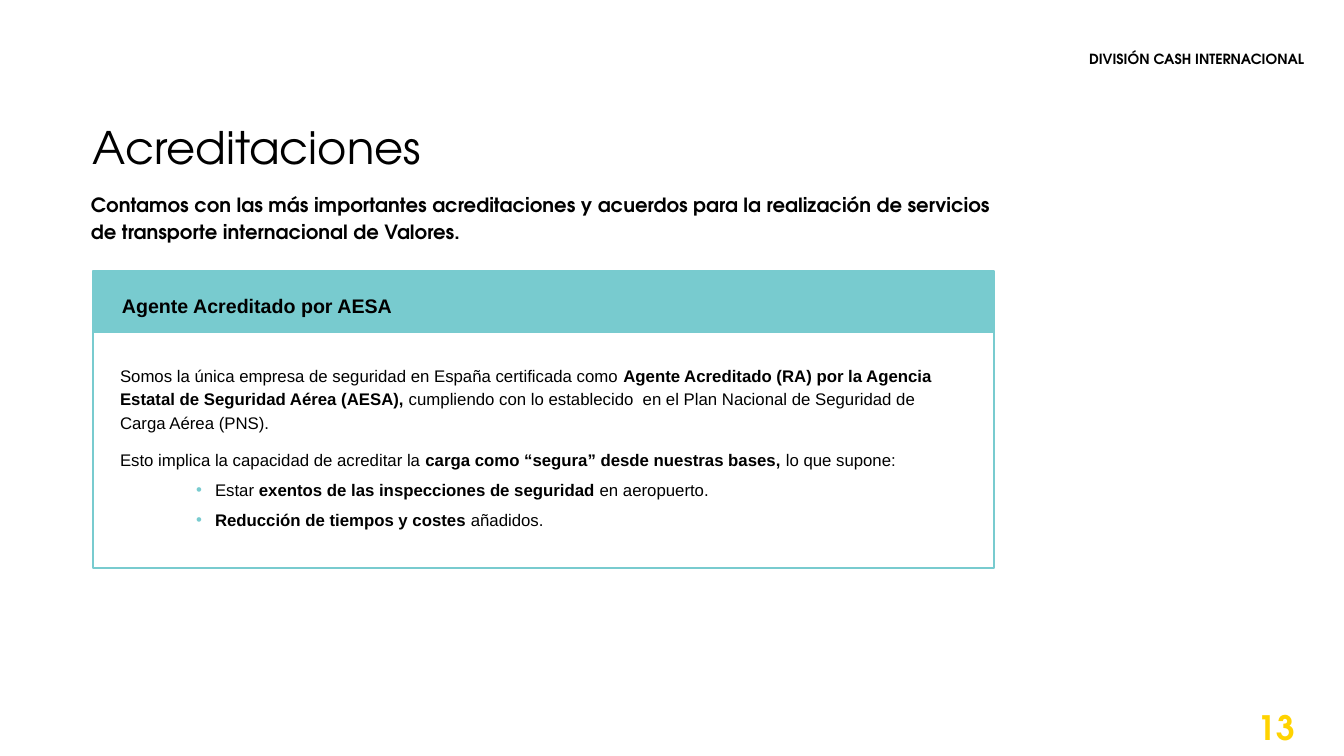
import pptx
import pptx.dml.color
import pptx.enum.shapes
import pptx.enum.text
import pptx.oxml
import pptx.oxml.ns
import pptx.util

PX = 914400 / 100.8
BLACK = pptx.dml.color.RGBColor(0x00, 0x00, 0x00)
TEAL = pptx.dml.color.RGBColor(0x78, 0xCB, 0xCF)
YELLOW = pptx.dml.color.RGBColor(0xFF, 0xD3, 0x00)
DISPLAY_FONT = "TeX Gyre Adventor"
BODY_FONT = "Arial"
ALIGN = pptx.enum.text.PP_ALIGN
ANCHOR = pptx.enum.text.MSO_ANCHOR

CARD_LEFT, CARD_TOP, CARD_WIDTH = 93, 271, 901
BAND_HEIGHT, CARD_HEIGHT = 62, 297

# Each paragraph: alignment, space before, bulleted, spans of (text, bold)
DETAILS = [
    (ALIGN.LEFT, 0, False, [
        ("Somos la única empresa de seguridad en España certificada como ", False),
        ("Agente Acreditado (RA) por la Agencia Estatal de Seguridad Aérea (AESA),", True),
        (" cumpliendo con lo establecido  en el Plan Nacional de Seguridad de "
         "Carga Aérea (PNS).", False)]),
    (ALIGN.JUSTIFY, 10, False, [
        ("Esto implica la capacidad de acreditar la ", False),
        ("carga como “segura” desde nuestras bases, ", True),
        ("lo que supone:", False)]),
    (ALIGN.JUSTIFY, 5, True, [
        ("Estar ", False),
        ("exentos de las inspecciones de seguridad ", True),
        ("en aeropuerto.", False)]),
    (ALIGN.JUSTIFY, 5, True, [
        ("Reducción de tiempos y costes ", True),
        ("añadidos.", False)]),
]


def px(length):
    return pptx.util.Emu(round(length * PX))


def place(shape, left, top, width, height):
    shape.left, shape.top = px(left), px(top)
    shape.width, shape.height = px(width), px(height)


def style_font(font, name, size, color, bold):
    font.name = name
    font.size = pptx.util.Pt(size)
    font.color.rgb = color
    font.bold = bold


def set_bullet(paragraph, bulleted):
    """Add a teal bullet with a hanging indent, or clear the inherited one."""
    properties = paragraph._p.get_or_add_pPr()
    properties.set("marL", str(px(95) if bulleted else 0))
    properties.set("indent", str(px(-19) if bulleted else 0))
    namespace = pptx.oxml.ns.nsdecls("a")
    if bulleted:
        marks = [f'<a:buClr {namespace}><a:srgbClr val="{TEAL}"/></a:buClr>',
                 f'<a:buFont {namespace} typeface="{BODY_FONT}"/>',
                 f'<a:buChar {namespace} char="•"/>']
    else:
        marks = [f"<a:buNone {namespace}/>"]
    for mark in marks:
        properties.append(pptx.oxml.parse_xml(mark))


def prepare_frame(frame, anchor=ANCHOR.TOP, inset=True):
    frame.word_wrap = True
    frame.auto_size = pptx.enum.text.MSO_AUTO_SIZE.NONE
    frame.vertical_anchor = anchor
    if not inset:
        frame.margin_left = frame.margin_right = 0
        frame.margin_top = frame.margin_bottom = 0


def fill_line(frame, text, font, size, color=BLACK, bold=True,
              align=ALIGN.LEFT, spacing=1.0):
    """Write one paragraph in a single style."""
    frame.text = text
    paragraph = frame.paragraphs[0]
    paragraph.alignment = align
    paragraph.line_spacing = spacing
    paragraph.space_before = pptx.util.Pt(0)
    style_font(paragraph.runs[0].font, font, size, color, bold)


def add_label(page, bounds, text, font, size, anchor=ANCHOR.TOP, inset=True, **style):
    box = page.shapes.add_textbox(*map(px, bounds))
    prepare_frame(box.text_frame, anchor, inset)
    fill_line(box.text_frame, text, font, size, **style)


def add_card_rectangle(page, height):
    rectangle = page.shapes.add_shape(
        pptx.enum.shapes.MSO_SHAPE.RECTANGLE,
        px(CARD_LEFT), px(CARD_TOP), px(CARD_WIDTH), px(height))
    rectangle.shadow.inherit = False
    return rectangle


def add_card(page):
    band = add_card_rectangle(page, BAND_HEIGHT)
    band.fill.solid()
    band.fill.fore_color.rgb = TEAL
    band.line.fill.background()
    border = add_card_rectangle(page, CARD_HEIGHT)
    border.fill.background()
    border.line.color.rgb = TEAL
    border.line.width = pptx.util.Pt(1)
    add_label(page, (112, 285, 362, 35), "Agente Acreditado por AESA",
              BODY_FONT, 14, spacing=1.15)


def fill_title(title):
    place(title, CARD_LEFT, 126, 744, 48)
    prepare_frame(title.text_frame, inset=False)
    fill_line(title.text_frame, "Acreditaciones", DISPLAY_FONT, 32,
              bold=False, spacing=0.9)


def fill_details(body):
    place(body, 120, 363, 834, 267)
    frame = body.text_frame
    prepare_frame(frame, inset=False)
    for index, (align, before, bulleted, spans) in enumerate(DETAILS):
        paragraph = frame.add_paragraph() if index else frame.paragraphs[0]
        set_bullet(paragraph, bulleted)
        paragraph.level = 1 if bulleted else 0
        paragraph.alignment = align
        paragraph.line_spacing = 1.15
        paragraph.space_before = pptx.util.Pt(before)
        for text, bold in spans:
            span = paragraph.add_run()
            span.text = text
            style_font(span.font, BODY_FONT, 12, BLACK, bold)


def main():
    deck = pptx.Presentation()
    deck.slide_width, deck.slide_height = px(1344), px(756)
    page = deck.slides.add_slide(deck.slide_layouts[1])
    fill_title(page.shapes.title)
    fill_details(page.placeholders[1])
    add_label(page, (302, 52, 1002, 15), "DIVISIÓN CASH INTERNACIONAL",
              DISPLAY_FONT, 10, inset=False, align=ALIGN.RIGHT, spacing=0.9)
    add_label(page, (81, 184, 941, 62),
              "Contamos con las más importantes acreditaciones y acuerdos para la "
              "realización de servicios de transporte internacional de Valores.",
              DISPLAY_FONT, 14, spacing=1.15)
    add_card(page)
    add_label(page, (1204, 712, 101, 30), "13", DISPLAY_FONT, 24,
              anchor=ANCHOR.MIDDLE, color=YELLOW, align=ALIGN.RIGHT)
    deck.save("out.pptx")


if __name__ == "__main__":
    main()
